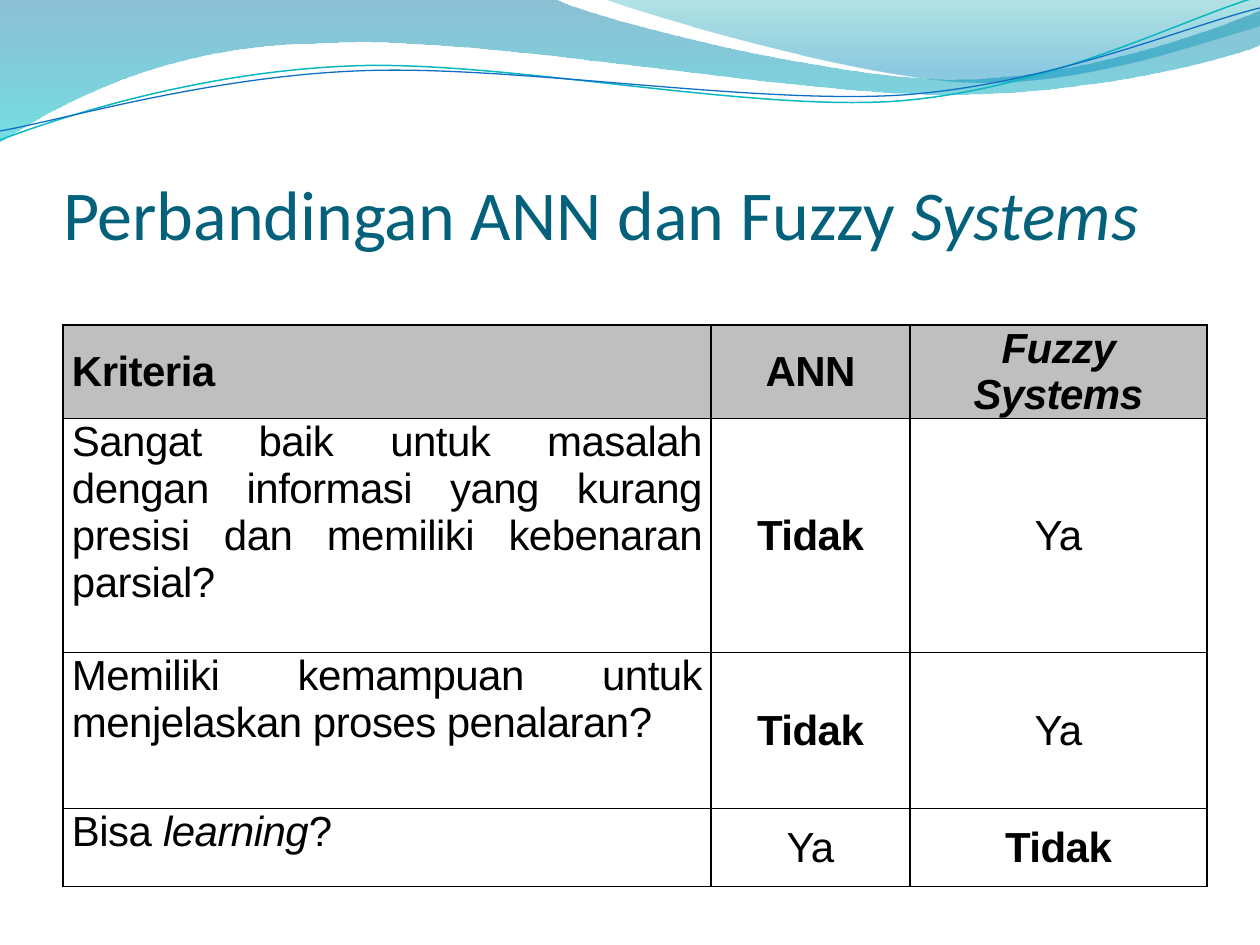
from dataclasses import dataclass

from lxml.etree import SubElement
from pptx import Presentation
from pptx.dml.color import RGBColor
from pptx.enum.text import MSO_ANCHOR, MSO_AUTO_SIZE, PP_ALIGN
from pptx.oxml.ns import qn
from pptx.util import Pt

EMU_PER_PX = 914400 / 126
COLORS = {
    "title": "04617B",
    "text": "000000",
    "border": "000000",
    "header": "BFBFBF",
    "deep_blue": "0074A1",
    "cyan": "00C6CF",
    "teal": "00A1A9",
    "sky": "008BBF",
    "teal_line": "0AB8BF",
    "blue_line": "0F6FC6",
}

Point = tuple[int, int]
# A segment with one point is a straight line, with three a cubic curve.
Segment = tuple[Point, ...]


@dataclass(frozen=True)
class Stop:
    color: str
    position: int
    opacity: int


@dataclass(frozen=True)
class Wave:
    start: Point
    segments: tuple[Segment, ...]
    stops: tuple[Stop, Stop]


@dataclass(frozen=True)
class Ripple:
    start: Point
    segments: tuple[Segment, ...]
    color: str
    width: float


@dataclass(frozen=True)
class Words:
    text: str
    bold: bool = False
    italic: bool = False


WAVES = [
    Wave((0, -1), (
        ((554, -1),),
        ((600, 21), (837, 79), (955, 79)),
        ((1075, 79), (1207, 33), (1260, 11)),
        ((1261, 45),),
        ((1239, 55), (1096, 96), (940, 94)),
        ((784, 94), (481, 35), (324, 43)),
        ((163, 44), (58, 105), (-1, 142)),
    ), (Stop("deep_blue", 0, 45), Stop("cyan", 100, 55))),
    Wave((604, -1), (
        ((641, 14), (859, 78), (969, 82)),
        ((1079, 87), (1211, 40), (1260, 26)),
        ((1260, 0),),
    ), (Stop("teal", 0, 30), Stop("sky", 80, 45))),
]
RIPPLES = [
    Ripple((0, 140), (
        ((60, 117), (199, 72), (349, 66)),
        ((498, 59), (747, 112), (898, 101)),
        ((1050, 89), (1182, 19), (1257, -3)),
    ), "teal_line", 0.85),
    Ripple((0, 131), (
        ((59, 121), (207, 77), (357, 71)),
        ((508, 64), (752, 105), (903, 95)),
        ((1053, 84), (1186, 26), (1260, 8)),
    ), "blue_line", 0.75),
]

YES = (Words("Ya"),)
NO = (Words("Tidak", bold=True),)
HEADER = (
    (Words("Kriteria", bold=True),),
    (Words("ANN", bold=True),),
    (Words("Fuzzy Systems", bold=True, italic=True),),
)
COMPARISON = [
    HEADER,
    ((Words("Sangat baik untuk masalah dengan informasi yang kurang presisi "
            "dan memiliki kebenaran parsial?"),), NO, YES),
    ((Words("Memiliki kemampuan untuk menjelaskan proses penalaran?"),), NO, YES),
    ((Words("Bisa "), Words("learning", italic=True), Words("?")), YES, NO),
]
COLUMN_WIDTHS = [648, 199, 297]
ROW_HEIGHTS = [78, 234, 156, 78]


def px(value: int) -> int:
    return round(value * EMU_PER_PX)


def rgb(name: str) -> RGBColor:
    return RGBColor.from_string(COLORS[name])


def add_outline(slide, part: Wave | Ripple, close: bool):
    """Build the outline through all its points, then bend the curved segments."""
    points = [(px(x), px(y)) for segment in part.segments for x, y in segment]
    builder = slide.shapes.build_freeform(*map(px, part.start), scale=1.0)
    builder.add_line_segments(points, close=close)
    shape = builder.convert_to_shape()
    shape.shadow.inherit = False
    steps = iter(list(shape.element.spPr.iter(qn("a:lnTo"))))
    for segment in part.segments:
        first, *others = [next(steps) for _ in segment]
        if others:
            first.tag = qn("a:cubicBezTo")
        for other in others:
            first.append(other[0])
            other.getparent().remove(other)
    return shape


def draw_wave(slide, wave: Wave) -> None:
    shape = add_outline(slide, wave, close=True)
    shape.line.fill.background()
    shape.fill.gradient()
    shape.fill.gradient_angle = 270
    for gradient_stop, stop in zip(shape.fill.gradient_stops, wave.stops):
        gradient_stop.color.rgb = rgb(stop.color)
    for node, stop in zip(shape.element.spPr.iter(qn("a:gs")), wave.stops):
        node.set("pos", str(stop.position * 1000))
        SubElement(node[0], qn("a:alpha"), val=str(stop.opacity * 1000))


def draw_ripple(slide, ripple: Ripple) -> None:
    shape = add_outline(slide, ripple, close=False)
    shape.fill.background()
    shape.line.color.rgb = rgb(ripple.color)
    shape.line.width = Pt(ripple.width)


def write_title(slide) -> None:
    title = slide.shapes.title
    title.left, title.top, title.width, title.height = map(px, (63, 97, 1144, 158))
    frame = title.text_frame
    frame.auto_size = MSO_AUTO_SIZE.NONE
    frame.word_wrap = True
    frame.vertical_anchor = MSO_ANCHOR.BOTTOM
    frame.margin_left = frame.margin_right = frame.margin_bottom = 0
    frame.margin_top = px(6)
    paragraph = frame.paragraphs[0]
    paragraph.alignment = PP_ALIGN.LEFT
    for words in (Words("Perbandingan ANN dan Fuzzy "), Words("Systems", italic=True)):
        write_words(paragraph, words, "Calibri", 40, "title")


def write_words(paragraph, words: Words, font: str, size: int, color: str):
    run = paragraph.add_run()
    run.text = words.text
    run.font.name, run.font.size = font, Pt(size)
    run.font.bold, run.font.italic = words.bold, words.italic
    run.font.color.rgb = rgb(color)
    return run


def draw_borders(cell) -> None:
    properties = cell._tc.get_or_add_tcPr()
    for side in ("L", "R", "T", "B"):
        line = SubElement(properties, qn(f"a:ln{side}"), w=str(Pt(1)))
        solid = SubElement(line, qn("a:solidFill"))
        SubElement(solid, qn("a:srgbClr"), val=COLORS["border"])


def fill_cell(cell, content: tuple[Words, ...], is_header: bool, is_criterion: bool) -> None:
    draw_borders(cell)
    if is_header:
        cell.fill.solid()
        cell.fill.fore_color.rgb = rgb("header")
    else:
        cell.fill.background()
    cell.margin_left = cell.margin_right = px(9)
    cell.margin_top = cell.margin_bottom = 0
    top = is_criterion and not is_header
    cell.vertical_anchor = MSO_ANCHOR.TOP if top else MSO_ANCHOR.MIDDLE
    paragraph = cell.text_frame.paragraphs[0]
    paragraph.space_before, paragraph.space_after = Pt(3), Pt(6)
    if not is_criterion:
        paragraph.alignment = PP_ALIGN.CENTER
    else:
        paragraph.alignment = PP_ALIGN.LEFT if is_header else PP_ALIGN.JUSTIFY
    for words in content:
        run = write_words(paragraph, words, "Arial", 24, "text")
        run.font._element.set("spc", "-30")


def draw_comparison(slide) -> None:
    table = slide.shapes.add_table(
        len(COMPARISON), len(HEADER), px(63), px(325),
        px(sum(COLUMN_WIDTHS)), px(sum(ROW_HEIGHTS))).table
    table.first_row = table.horz_banding = False
    for column, width in zip(table.columns, COLUMN_WIDTHS):
        column.width = px(width)
    for r, (row, height) in enumerate(zip(COMPARISON, ROW_HEIGHTS)):
        table.rows[r].height = px(height)
        for c, content in enumerate(row):
            fill_cell(table.cell(r, c), content, r == 0, c == 0)


def main() -> None:
    deck = Presentation()
    deck.slide_width, deck.slide_height = px(1260), px(945)
    slide = deck.slides.add_slide(deck.slide_layouts[5])
    for wave in WAVES:
        draw_wave(slide, wave)
    for ripple in RIPPLES:
        draw_ripple(slide, ripple)
    write_title(slide)
    draw_comparison(slide)
    deck.save("out.pptx")


if __name__ == "__main__":
    main()
